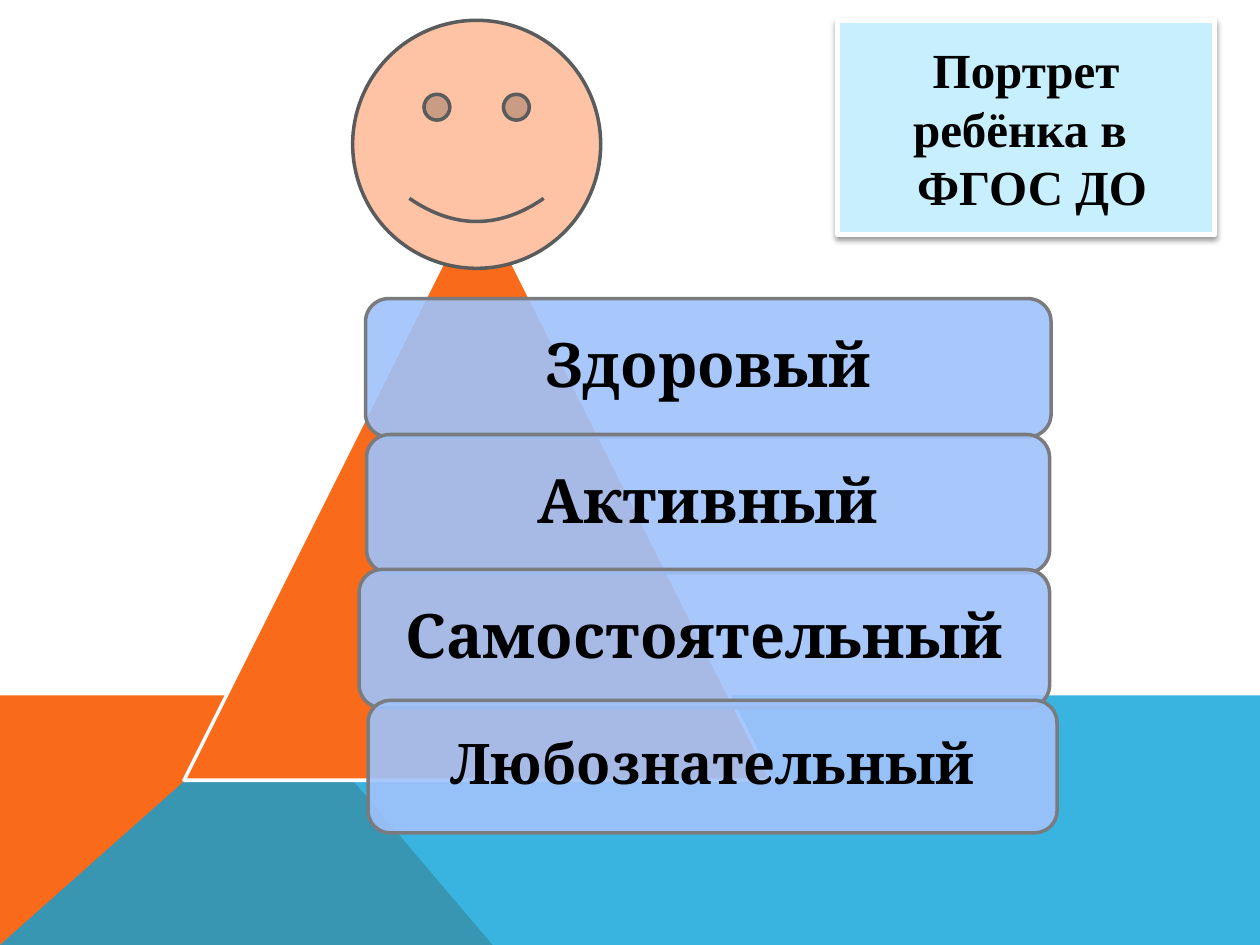
from dataclasses import dataclass

from lxml import etree
from pptx import Presentation
from pptx.dml.color import RGBColor
from pptx.enum import shapes, text
from pptx.oxml.ns import qn
from pptx.util import Cm, Pt

COLORS = {
    "orange": "F96A1B", "blue": "08A1D9", "card": "9FC2FB", "card_line": "797B7E",
    "face": "FDC3A4", "face_line": "5A5B5D", "heading": "C8EFFD",
    "white": "FFFFFF", "black": "000000",
}
SHAPE = shapes.MSO_SHAPE


@dataclass
class Box:
    """Position and size in centimetres."""
    left: float
    top: float
    width: float
    height: float

    def lengths(self) -> tuple:
        return Cm(self.left), Cm(self.top), Cm(self.width), Cm(self.height)


@dataclass
class Trait:
    label: str
    box: Box
    size: int = 35
    inset: float = 0.38


TRAITS = [
    Trait("Здоровый", Box(7.37, 6.02, 13.82, 2.79)),
    Trait("Активный", Box(7.39, 8.76, 13.77, 2.79)),
    Trait("Самостоятельный", Box(7.24, 11.48, 13.92, 2.79)),
    Trait("Любознательный", Box(7.42, 14.12, 13.89, 2.67), 32, 0.33),
]


def rgb(name: str) -> RGBColor:
    return RGBColor.from_string(COLORS[name])


def paint(sp, fill: str, line: str = "", width: float = 2, opacity: int = 100) -> None:
    sp.shadow.inherit = False
    sp.fill.solid()
    sp.fill.fore_color.rgb = rgb(fill)
    if opacity < 100:
        clr = sp.fill._xPr.find(qn("a:solidFill"))[0]
        etree.SubElement(clr, qn("a:alpha"), val=str(opacity * 1000))
    if line:
        sp.line.color.rgb = rgb(line)
        sp.line.width = Pt(width)
    else:
        sp.line.fill.background()


def format_text(tf, font: str, size: int) -> None:
    tf.word_wrap = True
    tf.auto_size = text.MSO_AUTO_SIZE.NONE
    tf.vertical_anchor = text.MSO_ANCHOR.MIDDLE
    for p in tf.paragraphs:
        p.alignment = text.PP_ALIGN.CENTER
        for r in p.runs:
            r.font.name = font
            r.font.size = Pt(size)
            r.font.bold = True
            r.font.color.rgb = rgb("black")


def add_floor(s, points: list, fill: str, opacity: int = 100) -> None:
    start, *rest = [(Cm(x), Cm(y)) for x, y in points]
    builder = s.shapes.build_freeform(*start)
    builder.add_line_segments(rest, close=True)
    paint(builder.convert_to_shape(), fill, opacity=opacity)


def add_figure(s, kind: SHAPE, box: Box, fill: str, line: str, opacity: int = 100):
    sp = s.shapes.add_shape(kind, *box.lengths())
    paint(sp, fill, line, opacity=opacity)
    return sp


def add_trait(s, trait: Trait) -> None:
    sp = add_figure(s, SHAPE.ROUNDED_RECTANGLE, trait.box, "card", "card_line", 90)
    tf = sp.text_frame
    tf.text = trait.label
    tf.margin_left = tf.margin_right = tf.margin_top = tf.margin_bottom = Cm(trait.inset)
    tf.paragraphs[0].line_spacing = 0.9
    format_text(tf, "Cambria", trait.size)


def set_heading(s, label: str, box: Box) -> None:
    """Turn the title placeholder into a rounded card with a soft shadow."""
    sp = s.shapes.title
    sp.left, sp.top, sp.width, sp.height = box.lengths()
    geom = etree.SubElement(sp._element.spPr, qn("a:prstGeom"), prst="roundRect")
    etree.SubElement(geom, qn("a:avLst"))
    paint(sp, "heading", "white", 3)
    effects = sp._element.spPr.find(qn("a:effectLst"))
    shadow = etree.SubElement(effects, qn("a:outerShdw"), blurRad=str(Pt(3.1)),
                              dist=str(Pt(1.6)), dir="5400000", rotWithShape="0")
    clr = etree.SubElement(shadow, qn("a:srgbClr"), val=COLORS["black"])
    etree.SubElement(clr, qn("a:alpha"), val="38000")
    sp.text_frame.text = label
    format_text(sp.text_frame, "Times New Roman", 28)


def main() -> None:
    prs = Presentation()
    prs.slide_width, prs.slide_height = Cm(25.4), Cm(19.05)
    s = prs.slides.add_slide(prs.slide_layouts[5])

    width, bottom, horizon, corner = 25.4, 19.05, 14.02, 5.66
    add_floor(s, [(0, bottom), (0, horizon), (corner, horizon), (9.93, bottom)], "orange")
    add_floor(s, [(0, bottom), (corner, horizon), (width, horizon), (width, bottom)],
              "blue", 80)

    add_figure(s, SHAPE.ISOSCELES_TRIANGLE, Box(3.71, 3.89, 11.84, 11.84), "orange", "white")
    for trait in TRAITS:
        add_trait(s, trait)
    add_figure(s, SHAPE.SMILEY_FACE, Box(7.11, 0.41, 5, 5), "face", "face_line")
    set_heading(s, "Портрет ребёнка в \n ФГОС ДО", Box(16.89, 0.41, 7.59, 4.32))

    prs.save("out.pptx")


if __name__ == "__main__":
    main()
